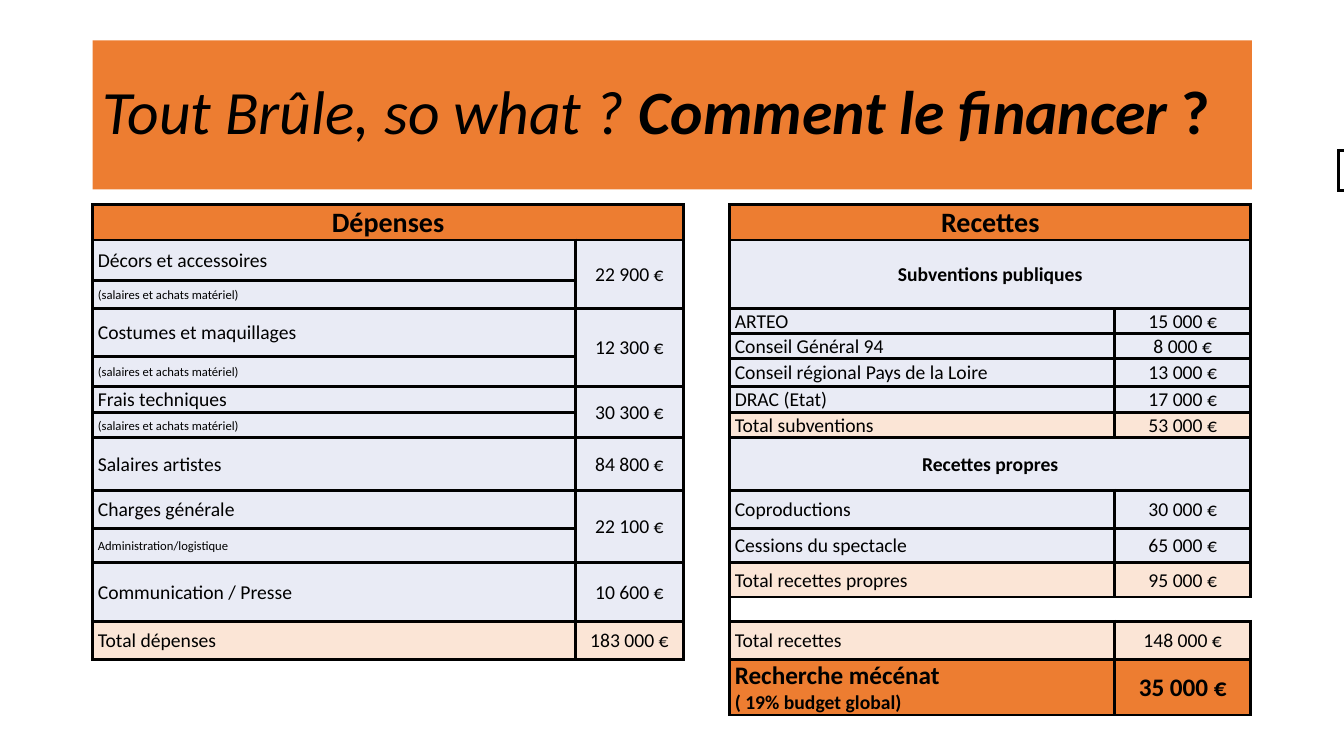
from itertools import product

from lxml import etree
from pptx import Presentation
from pptx import util as u
from pptx.dml.color import RGBColor
from pptx.enum import shapes, text
from pptx.oxml import ns

WIDTH, HEIGHT = 40 / 3, 7.5
ORANGE, LAVENDER, PEACH, WHITE, BLACK = "ED7D31", "E9EBF5", "FBE5D6", "FFFFFF", "000000"
COLUMNS = [4.79, 1.07, 0.46, 3.82, 1.35]
ROWS = [0.34, 0.4, 0.28, 0.24, 0.23, 0, 0.28, 0.26, 0.25, 0.52, 0.38, 0.34, 0.34, 0.24, 0.38, 0.55]
SIDES = {"lnL": (0, -1), "lnR": (0, 1), "lnT": (-1, 0), "lnB": (1, 0)}
EXPENSES, GAP, INCOME = 0, 2, 3
DETAIL = "(salaires et achats matériel)"

STYLES = {
    "heading": (ORANGE, 20, True),
    "section": (LAVENDER, 14, True),
    "item": (LAVENDER, 14, False),
    "detail": (LAVENDER, 9, False),
    "total": (PEACH, 14, False),
    "goal": (ORANGE, 18, True),
    "blank": (WHITE, 9, False),
}

EXPENSE_LINES = [
    (1, 1, "Décors et accessoires", DETAIL, 1, "22 900 €"),
    (3, 2, "Costumes et maquillages", DETAIL, 2, "12 300 €"),
    (7, 1, "Frais techniques", DETAIL, 1, "30 300 €"),
    (9, 1, "Salaires artistes", "", 0, "84 800 €"),
    (10, 1, "Charges générale", "Administration/logistique", 1, "22 100 €"),
    (12, 2, "Communication / Presse", "", 0, "10 600 €"),
    ]
INCOME_LINES = [
    (3, 1, "item", "ARTEO", "15 000 €"),
    (4, 2, "item", "Conseil Général 94", "8 000 €"),
    (6, 1, "item", "Conseil régional Pays de la Loire", "13 000 €"),
    (7, 1, "item", "DRAC (Etat)", "17 000 €"),
    (8, 1, "total", "Total subventions", "53 000 €"),
    (10, 1, "item", "Coproductions", "30 000 €"),
    (11, 1, "item", "Cessions du spectacle", "65 000 €"),
    (12, 1, "total", "Total recettes propres", "95 000 €"),
    (14, 1, "total", "Total recettes", "148 000 €"),
    (15, 1, "goal", "Recherche mécénat\n( 19% budget global)", "35 000 €"),
]


def colour(value):
    """Turn a hex string into a colour."""
    return RGBColor.from_string(value)


def set_font(font, size, bold=False):
    """Apply the slide's typeface with a size and weight."""
    font.name, font.size, font.bold = "Calibri", u.Pt(size), bold
    font.color.rgb = colour(BLACK)


def draw_borders(cell, ruled):
    """Rule the given sides of a cell in black and clear the others."""
    properties = cell._tc.get_or_add_tcPr()
    for position, side in enumerate(SIDES):
        line = etree.Element(ns.qn(f"a:{side}"), w=str(u.Pt(2.25)))
        if side in ruled:
            fill = etree.SubElement(line, ns.qn("a:solidFill"))
            etree.SubElement(fill, ns.qn("a:srgbClr"), val=BLACK)
        else:
            etree.SubElement(line, ns.qn("a:noFill"))
        properties.insert(position, line)


def write_cell(cell, style, words="", centred=False):
    """Fill a cell and write its lines in the given style."""
    fill, size, bold = STYLES[style]
    cell.fill.solid()
    cell.fill.fore_color.rgb = colour(fill)
    cell.margin_left = u.Inches(0.01 if centred else 0.05)
    cell.margin_right = cell.margin_top = u.Inches(0.01)
    cell.margin_bottom = 0
    cell.vertical_anchor = text.MSO_ANCHOR.MIDDLE
    cell.text = words
    for index, paragraph in enumerate(cell.text_frame.paragraphs):
        set_font(paragraph.font, 14 if index else size, bold)
        paragraph.alignment = text.PP_ALIGN.CENTER if centred else text.PP_ALIGN.LEFT


def budget_entries():
    """List each filled area as row, column, height, width, style and words."""
    entries = [
        (0, EXPENSES, 1, 2, "heading", "Dépenses"),
        (0, INCOME, 1, 2, "heading", "Recettes"),
        (1, INCOME, 2, 2, "section", "Subventions publiques"),
        (9, INCOME, 1, 2, "section", "Recettes propres"),
        (0, GAP, 15, 1, "blank", ""),
        (14, EXPENSES, 1, 1, "total", "Total dépenses"),
        (14, EXPENSES + 1, 1, 1, "total", "183 000 €"),
    ]
    for row, height, label, detail, extra, amount in EXPENSE_LINES:
        entries.append((row, EXPENSES, height, 1, "item", label))
        entries.append((row, EXPENSES + 1, height + extra, 1, "item", amount))
        if extra:
            entries.append((row + height, EXPENSES, extra, 1, "detail", detail))
    for row, height, style, label, amount in INCOME_LINES:
        entries.append((row, INCOME, height, 1, style, label))
        entries.append((row, INCOME + 1, height, 1, style, amount))
    return entries


def add_table(slide, box, columns, rows):
    """Add an unstyled table whose columns and rows share the box."""
    left, top, width, height = box
    frame = slide.shapes.add_table(len(rows), len(columns), *map(u.Inches, box))
    table = frame.table
    table.first_row = table.horz_banding = False
    for column, share in zip(table.columns, columns):
        column.width = u.Inches(width * share / sum(columns))
    for row, share in zip(table.rows, rows):
        row.height = u.Inches(height * share / sum(rows))
    for cell in table.iter_cells():
        write_cell(cell, "blank")
    return table


def add_budget(slide, box):
    """Place the expense and income table in the box."""
    table = add_table(slide, box, COLUMNS, ROWS)
    areas, filled = {}, set()
    for row, column, height, width, style, words in budget_entries():
        cell = table.cell(row, column)
        centred = width == 2 or column in (EXPENSES + 1, INCOME + 1)
        write_cell(cell, style, words, centred)
        if height * width > 1:
            cell.merge(table.cell(row + height - 1, column + width - 1))
        for place in product(range(row, row + height), range(column, column + width)):
            areas[place] = (row, column)
            if style != "blank":
                filled.add(place)
    gap = (0, GAP)
    places = list(product(range(len(ROWS)), range(len(COLUMNS))))
    ruled = {place: set() for place in places}
    for place, (side, (down, across)) in product(places, SIDES.items()):
        neighbour = place[0] + down, place[1] + across
        area, next_area = areas.get(place, place), areas.get(neighbour, neighbour)
        beside_gap = across and gap in (area, next_area)
        if area != next_area and (filled & {place, neighbour} or beside_gap):
            ruled[place].add(side)
            ruled[area].add(side)
    for place in places:
        draw_borders(table.cell(*place), ruled[place])


def add_edge_box(slide, box):
    """Place the small framed table at the right edge."""
    table = add_table(slide, box, [1], [1])
    draw_borders(table.cell(0, 0), SIDES)


def add_title(slide, box):
    """Place the orange title banner in the box."""
    shape = slide.shapes.add_shape(shapes.MSO_SHAPE.RECTANGLE, *map(u.Inches, box))
    shape.shadow.inherit = False
    shape.fill.solid()
    shape.fill.fore_color.rgb = colour(ORANGE)
    shape.line.fill.background()
    frame = shape.text_frame
    frame.word_wrap = True
    frame.vertical_anchor = text.MSO_ANCHOR.MIDDLE
    paragraph = frame.paragraphs[0]
    paragraph.alignment = text.PP_ALIGN.LEFT
    paragraph.line_spacing = 0.9
    for words, bold, italic in [
        ("Tout Brûle, so what ? ", False, True),
        ("Comment le financer", True, True),
        (" ?", True, False),
    ]:
        run = paragraph.add_run()
        run.text = words
        set_font(run.font, 44, bold)
        run.font.italic = italic


def main():
    """Build the financing slide and save it."""
    presentation = Presentation()
    presentation.slide_width, presentation.slide_height = u.Inches(WIDTH), u.Inches(HEIGHT)
    slide = presentation.slides.add_slide(presentation.slide_layouts[6])
    add_title(slide, (0.92, 0.4, 11.5, 1.48))
    add_budget(slide, (0.92, 2.03, sum(COLUMNS), sum(ROWS)))
    add_edge_box(slide, (13.28, 1.49, 0.23, 0.4))
    presentation.save("out.pptx")


if __name__ == "__main__":
    main()
